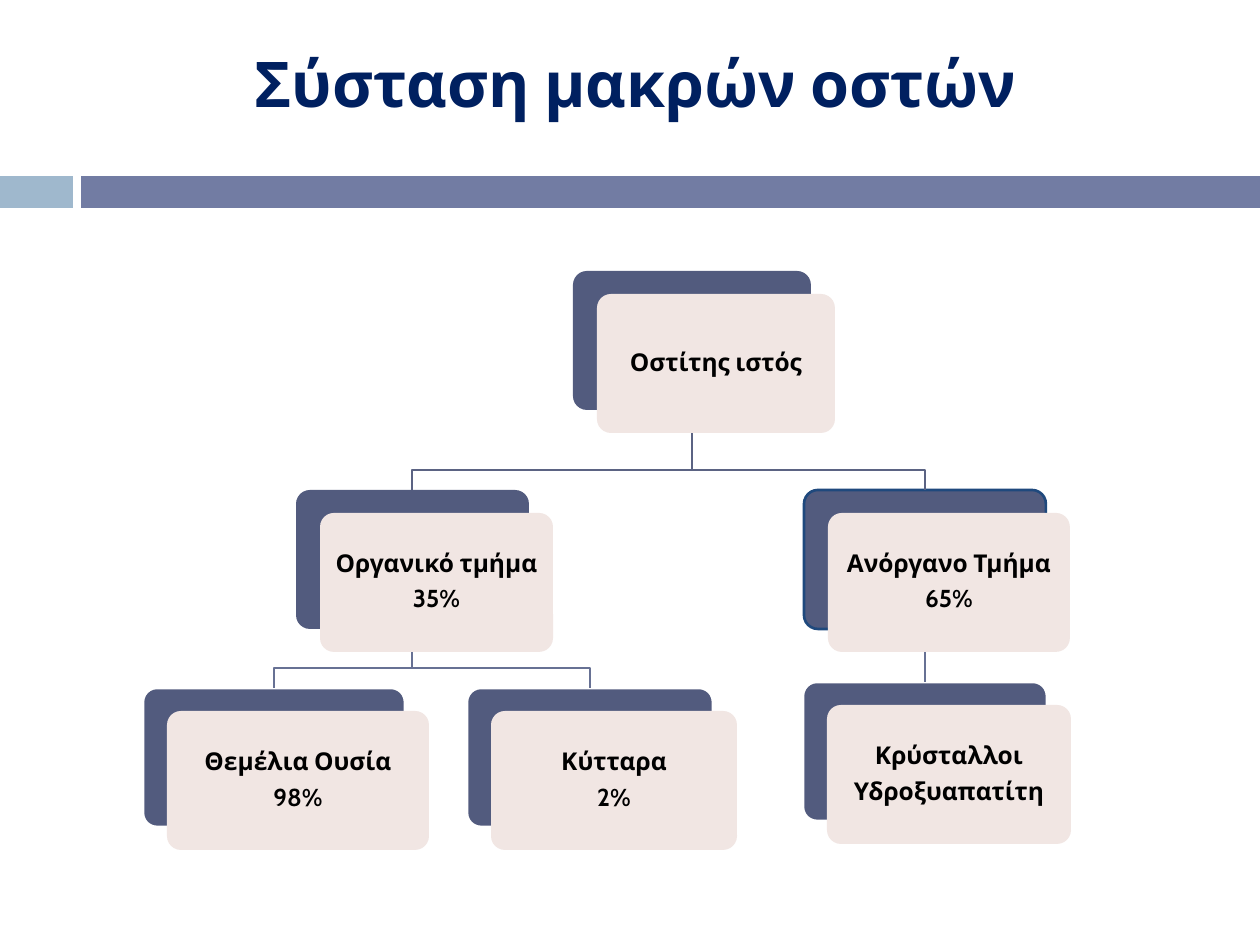
"""Build a slide with a tree chart of what long bones are made of."""
from dataclasses import dataclass
from typing import Optional

import lxml.etree
import pptx
import pptx.dml.color
import pptx.enum.shapes
import pptx.enum.text
import pptx.oxml.ns
import pptx.shapes.base
import pptx.util

SCALE = 914400 / 126
FONT = "Cabin"
HIGH = 139
SHIFT = (24, 23)
BEND = 20
HUES = {
    "sky": "9FB8CD", "bar": "727CA3", "back": "525B7E", "card": "F1E6E3",
    "trunk": "5B6383", "branch": "677194", "edge": "1F497D",
    "white": "FFFFFF", "black": "000000", "navy": "002060",
}
KIND = pptx.enum.shapes.MSO_SHAPE
ALIGN = pptx.enum.text.PP_ALIGN
ANCHOR = pptx.enum.text.MSO_ANCHOR


@dataclass(frozen=True)
class Node:
    left: int
    top: int
    width: int
    lines: tuple[str, ...]
    edge: Optional[str] = None

    @property
    def mid(self) -> int:
        return self.left + self.width // 2


@dataclass(frozen=True)
class Link:
    start: str
    end: str
    hue: str


NODES = {
    "bone": Node(573, 271, 238, ("Οστίτης ιστός",)),
    "live": Node(296, 490, 233, ("Οργανικό τμήμα", "35%")),
    "ground": Node(143, 688, 262, ("Θεμέλια Ουσία", "98%"), "white"),
    "cells": Node(467, 688, 246, ("Κύτταρα", "2%"), "white"),
    "stone": Node(804, 490, 242, ("Ανόργανο Τμήμα", "65%"), "edge"),
    "salt": Node(803, 682, 244, ("Κρύσταλλοι", "Υδροξυαπατίτη"), "white"),
}
LINKS = (
    Link("stone", "salt", "branch"),
    Link("bone", "stone", "trunk"),
    Link("live", "cells", "branch"),
    Link("live", "ground", "branch"),
    Link("bone", "live", "trunk"),
)


def px(size: float) -> pptx.util.Emu:
    return pptx.util.Emu(round(size * SCALE))


def tint(name: str) -> pptx.dml.color.RGBColor:
    return pptx.dml.color.RGBColor.from_string(HUES[name])


def ink(line, hue: Optional[str]) -> None:
    if hue is None:
        line.fill.background()
    else:
        line.color.rgb = tint(hue)
        line.width = pptx.util.Pt(1.5)


def block(slide, left: int, top: int, width: int, high: int, hue: str, *,
          edge: Optional[str] = None, round_by: Optional[float] = None) -> pptx.shapes.base.BaseShape:
    kind = KIND.RECTANGLE if round_by is None else KIND.ROUNDED_RECTANGLE
    shape = slide.shapes.add_shape(kind, px(left), px(top), px(width), px(high))
    if round_by is not None:
        shape.adjustments[0] = round_by
    shape.shadow.inherit = False
    shape.fill.solid()
    shape.fill.fore_color.rgb = tint(hue)
    ink(shape.line, edge)
    return shape


def write(shape, *lines: str, size: int, hue: str, anchor: ANCHOR, pad: tuple[int, int],
          space: Optional[float] = None, before: int = 0, after: int = 0) -> None:
    frame = shape.text_frame
    frame.word_wrap = True
    frame.auto_size = pptx.enum.text.MSO_AUTO_SIZE.NONE
    frame.vertical_anchor = anchor
    frame.margin_left = frame.margin_right = px(pad[0])
    frame.margin_top = frame.margin_bottom = px(pad[1])
    frame.text = "\n".join(lines)
    for para in frame.paragraphs:
        para.alignment = ALIGN.CENTER
        para.line_spacing = space
        para.space_before = pptx.util.Pt(before)
        para.space_after = pptx.util.Pt(after)
        font = para.runs[0].font
        font.name, font.size, font.bold = FONT, pptx.util.Pt(size), True
        font.color.rgb = tint(hue)


def join(slide, link: Link, backs: dict) -> None:
    start, end = NODES[link.start], NODES[link.end]
    base = start.top + HIGH
    if start.mid == end.mid:
        line = slide.shapes.add_connector(
            pptx.enum.shapes.MSO_CONNECTOR.STRAIGHT,
            px(start.mid), px(base), px(end.mid), px(end.top))
        line.begin_connect(backs[link.start], 2)
        line.end_connect(backs[link.end], 0)
        ink(line.line, link.hue)
        lxml.etree.SubElement(line._element.spPr, pptx.oxml.ns.qn("a:effectLst"))
        return
    turn = end.top - BEND
    pen = slide.shapes.build_freeform(start.mid, base, scale=SCALE)
    pen.add_line_segments(
        [(start.mid, turn), (end.mid, turn), (end.mid, end.top)], close=False)
    line = pen.convert_to_shape()
    line.shadow.inherit = False
    line.fill.background()
    ink(line.line, link.hue)


def main() -> None:
    deck = pptx.Presentation()
    deck.slide_width, deck.slide_height = px(1260), px(945)
    slide = deck.slides.add_slide(deck.slide_layouts[5])
    title = slide.shapes.title
    title.left, title.top, title.width, title.height = map(px, (100, 38, 1071, 147))
    write(title, "Σύσταση μακρών οστών", size=36, hue="navy",
          anchor=ANCHOR.TOP, pad=(13, 6), before=7)
    block(slide, 0, 176, 73, 32, "sky")
    block(slide, 81, 176, 1179, 32, "bar")
    backs = {
        name: block(slide, node.left, node.top, node.width, HIGH, "back",
                    edge=node.edge, round_by=0.1)
        for name, node in NODES.items()
    }
    for link in LINKS:
        join(slide, link, backs)
    for node in NODES.values():
        card = block(slide, node.left + SHIFT[0], node.top + SHIFT[1],
                     node.width, HIGH, "card", round_by=0.1)
        write(card, *node.lines, size=14, hue="black", anchor=ANCHOR.MIDDLE,
              pad=(11, 11), space=0.9, after=5)
    deck.save("out.pptx")


if __name__ == "__main__":
    main()
